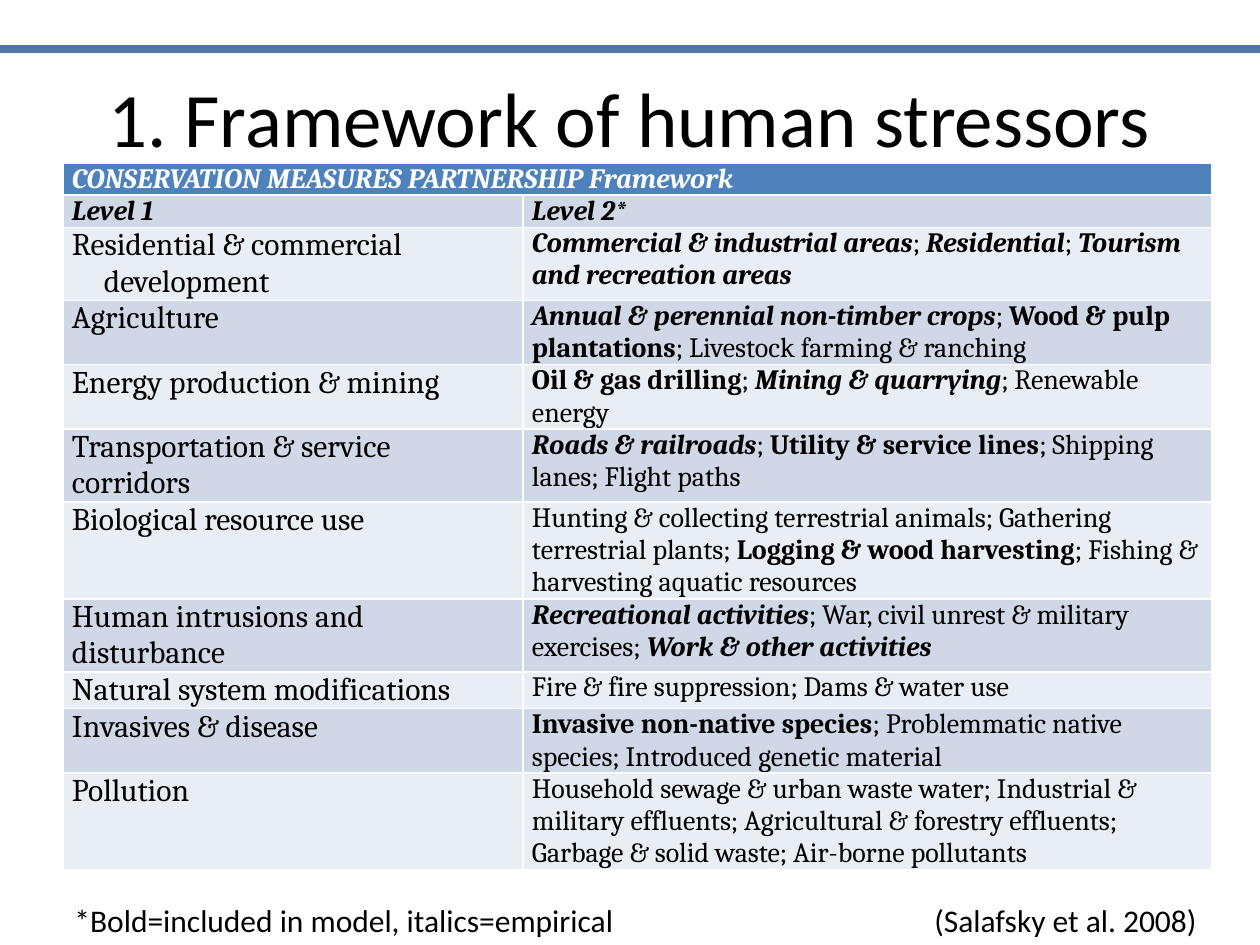
from pptx import Presentation
from pptx.dml.color import RGBColor
from pptx.enum.shapes import MSO_CONNECTOR
from pptx.enum.text import MSO_ANCHOR, MSO_AUTO_SIZE, PP_ALIGN
from pptx.oxml.ns import qn
from pptx.util import Emu, Pt
from lxml import etree

STRAIGHT = MSO_CONNECTOR.STRAIGHT
MIDDLE = MSO_ANCHOR.MIDDLE
CENTER = PP_ALIGN.CENTER
FIT_SHAPE = MSO_AUTO_SIZE.SHAPE_TO_FIT_TEXT

PX_PER_INCH = 126
TITLE_ONLY_LAYOUT = 5
BODY_FONT, TABLE_FONT = "Calibri", "Cambria"
COLORS = {
    "rule": "5176A5",
    "header": "4F81BD",
    "band_dark": "D0D8E8",
    "band_light": "E9EDF4",
    "white": "FFFFFF",
    "black": "000000",
}
PLAIN, BOLD, BOLD_ITALIC = (False, False), (True, False), (True, True)

TABLE_HEADING = "CONSERVATION MEASURES PARTNERSHIP Framework"
COLUMN_HEADINGS = ("Level 1", "Level 2*")
COLUMN_WIDTHS = (460, 689)
HEADING_HEIGHTS = (31, 32)
HANGING_INDENT = 32

# Row height, level 1 text, hanging indent, level 2 runs
STRESSORS = [
    (73, "Residential & commercial development", True, [
        ("Commercial & industrial areas", BOLD_ITALIC), ("; ", PLAIN),
        ("Residential", BOLD_ITALIC), ("; ", PLAIN),
        ("Tourism and recreation areas", BOLD_ITALIC)]),
    (64, "Agriculture", False, [
        ("Annual & perennial non-timber crops", BOLD_ITALIC), ("; ", PLAIN),
        ("Wood & pulp plantations", BOLD),
        ("; Livestock farming & ranching", PLAIN)]),
    (64, "Energy production & mining", True, [
        ("Oil & gas drilling", BOLD), ("; ", PLAIN),
        ("Mining & quarrying", BOLD_ITALIC),
        ("; Renewable energy", PLAIN)]),
    (73, "Transportation & service corridors", False, [
        ("Roads & railroads", BOLD_ITALIC), ("; ", PLAIN),
        ("Utility & service lines", BOLD),
        ("; Shipping lanes; Flight paths", PLAIN)]),
    (97, "Biological resource use", False, [
        ("Hunting & collecting terrestrial animals; "
         "Gathering terrestrial plants; ", PLAIN),
        ("Logging & wood harvesting", BOLD),
        ("; Fishing & harvesting aquatic resources", PLAIN)]),
    (72, "Human intrusions and disturbance", False, [
        ("Recreational activities", BOLD_ITALIC),
        ("; War, civil unrest & military exercises; ", PLAIN),
        ("Work & other activities", BOLD_ITALIC)]),
    (37, "Natural system modifications", False, [
        ("Fire & fire suppression; Dams & water use", PLAIN)]),
    (64, "Invasives & disease", False, [
        ("Invasive non-native species", BOLD),
        ("; Problemmatic native species; Introduced genetic material", PLAIN)]),
    (96, "Pollution", False, [
        ("Household sewage & urban waste water; "
         "Industrial & military effluents; Agricultural & forestry effluents; "
         "Garbage & solid waste; Air-borne pollutants", PLAIN)]),
]


def px(length):
    return Emu(round(length * 914400 / PX_PER_INCH))


def color(name):
    return RGBColor.from_string(COLORS[name])


def add_run(paragraph, text, size, font_name, color_name="black", style=PLAIN):
    run = paragraph.add_run()
    run.text = text
    font = run.font
    font.size, font.name = Pt(size), font_name
    font.bold, font.italic = style
    font.color.rgb = color(color_name)


def add_rule(slide, left, top, width):
    rule = slide.shapes.add_connector(
        STRAIGHT, px(left), px(top), px(left + width), px(top))
    rule.line.color.rgb = color("rule")
    rule.line.width = Pt(4.5)
    etree.SubElement(rule._element.spPr, qn("a:effectLst"))


def place_title(slide, left, top, width, height, text):
    title = slide.shapes.title
    title.left, title.top = px(left), px(top)
    title.width, title.height = px(width), px(height)
    frame = title.text_frame
    frame.vertical_anchor = MIDDLE
    paragraph = frame.paragraphs[0]
    paragraph.alignment = CENTER
    add_run(paragraph, text, 44, BODY_FONT)


def fill_cell(cell, fill_name, runs, size=16, color_name="black", hanging=False):
    """Fill one cell with a colour and a paragraph of (text, style) runs."""
    cell.fill.solid()
    cell.fill.fore_color.rgb = color(fill_name)
    cell.margin_left = cell.margin_right = px(9)
    cell.margin_top = cell.margin_bottom = 0
    paragraph = cell.text_frame.paragraphs[0]
    if hanging:
        properties = paragraph._p.get_or_add_pPr()
        properties.set("marL", str(px(HANGING_INDENT)))
        properties.set("indent", str(-px(HANGING_INDENT)))
    for text, style in runs:
        add_run(paragraph, text, size, TABLE_FONT, color_name, style)


def add_stressor_table(slide, left, top):
    heights = [*HEADING_HEIGHTS, *(stressor[0] for stressor in STRESSORS)]
    table = slide.shapes.add_table(
        len(heights), len(COLUMN_WIDTHS), px(left), px(top),
        px(sum(COLUMN_WIDTHS)), px(sum(heights))).table
    for column, width in zip(table.columns, COLUMN_WIDTHS):
        column.width = px(width)
    for row, height in zip(table.rows, heights):
        row.height = px(height)

    heading = table.cell(0, 0)
    heading.merge(table.cell(0, 1))
    fill_cell(heading, "header", [(TABLE_HEADING, BOLD_ITALIC)],
              color_name="white")
    for column, text in enumerate(COLUMN_HEADINGS):
        fill_cell(table.cell(1, column), "band_dark", [(text, BOLD_ITALIC)])
    for row, (_, level_1, hanging, level_2) in enumerate(STRESSORS, start=2):
        band = "band_dark" if row % 2 else "band_light"
        fill_cell(table.cell(row, 0), band, [(level_1, PLAIN)], 18,
                  hanging=hanging)
        fill_cell(table.cell(row, 1), band, level_2)


def add_footnote(slide, left, top, width, height, text):
    box = slide.shapes.add_textbox(px(left), px(top), px(width), px(height))
    frame = box.text_frame
    frame.word_wrap = False
    frame.auto_size = FIT_SHAPE
    add_run(frame.paragraphs[0], text, 18, BODY_FONT)


def main():
    presentation = Presentation()
    presentation.slide_width, presentation.slide_height = px(1260), px(945)
    slide = presentation.slides.add_slide(
        presentation.slide_layouts[TITLE_ONLY_LAYOUT])
    add_rule(slide, 0, 49, 1260)
    add_stressor_table(slide, 63, 163)
    place_title(slide, 63, 38, 1134, 158, "1. Framework of human stressors")
    add_footnote(slide, 922, 895, 291, 50, "(Salafsky et al. 2008)")
    add_footnote(slide, 62, 895, 571, 50,
                 "*Bold=included in model, italics=empirical")
    presentation.save("out.pptx")


if __name__ == "__main__":
    main()
